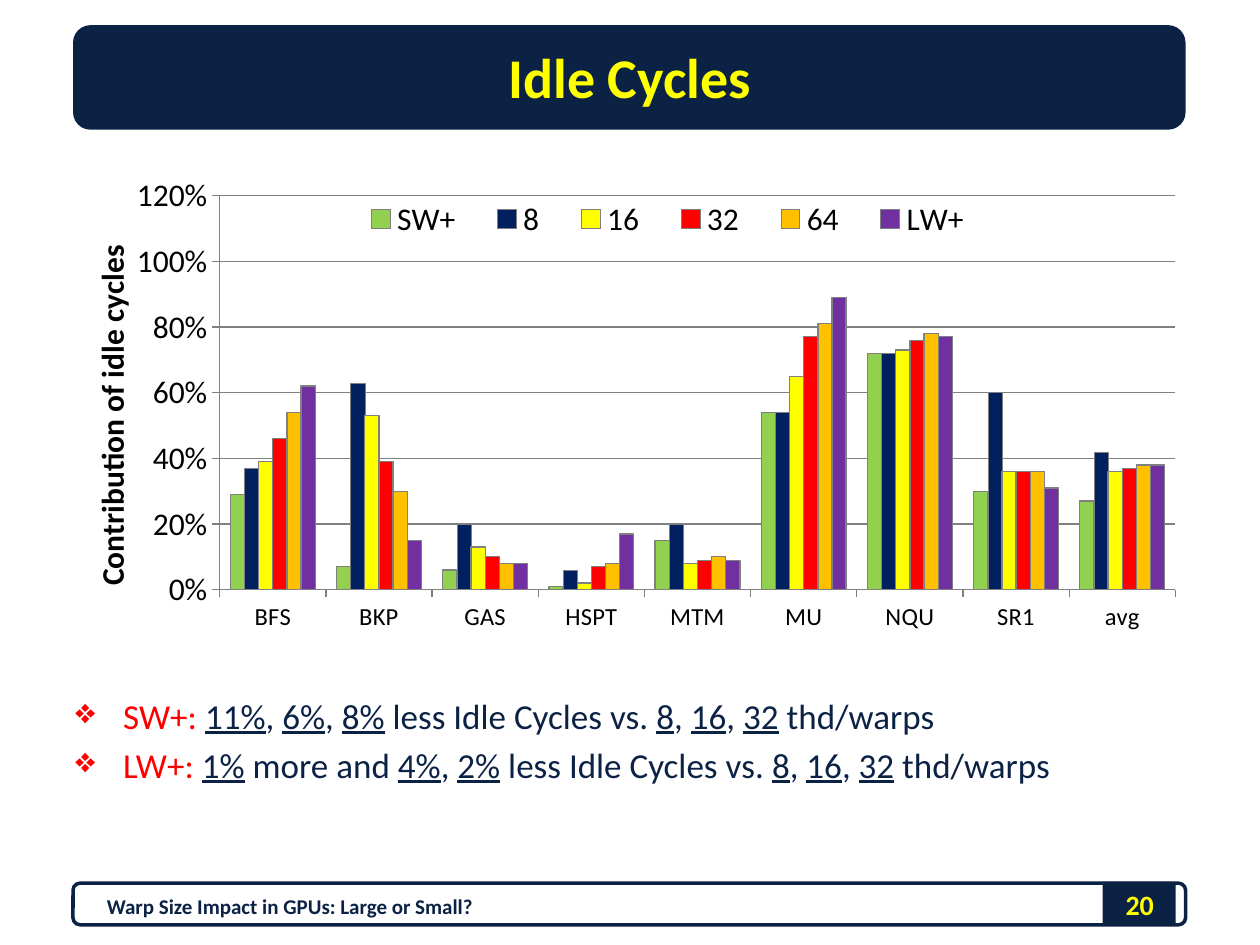
from lxml import etree
from pptx import Presentation
from pptx.chart.data import CategoryChartData as ChartData
from pptx.dml.color import RGBColor
from pptx.enum.chart import XL_CHART_TYPE as ChartType
from pptx.enum.chart import XL_LEGEND_POSITION as LegendSide
from pptx.enum.chart import XL_TICK_MARK as Tick
from pptx.enum.shapes import MSO_SHAPE as Shape
from pptx.enum.text import MSO_ANCHOR as Anchor
from pptx.enum.text import PP_ALIGN as Align
from pptx.oxml.ns import qn
from pptx.util import Inches, Pt

NAVY = RGBColor(0x0B, 0x22, 0x45)
YELLOW = RGBColor(0xFF, 0xFF, 0x00)
RED = RGBColor(0xFF, 0x00, 0x00)
BLACK = RGBColor(0x00, 0x00, 0x00)
GRAY = RGBColor(0x80, 0x80, 0x80)
GREEN = RGBColor(0x92, 0xD0, 0x50)
BLUE = RGBColor(0x00, 0x20, 0x60)
ORANGE = RGBColor(0xFF, 0xC0, 0x00)
PURPLE = RGBColor(0x70, 0x30, 0xA0)

BENCHMARKS = ["BFS", "BKP", "GAS", "HSPT", "MTM", "MU", "NQU", "SR1", "avg"]
# Name, colour, outline width, share of idle cycles per benchmark
WARP_SIZES = [
    ("SW+", GREEN, 0.75, [0.29, 0.07, 0.06, 0.01, 0.15, 0.54, 0.72, 0.30, 0.27]),
    ("8", BLUE, 0.25, [0.37, 0.63, 0.20, 0.06, 0.20, 0.54, 0.72, 0.60, 0.42]),
    ("16", YELLOW, 0.75, [0.39, 0.53, 0.13, 0.02, 0.08, 0.65, 0.73, 0.36, 0.36]),
    ("32", RED, 0.75, [0.46, 0.39, 0.10, 0.07, 0.09, 0.77, 0.76, 0.36, 0.37]),
    ("64", ORANGE, 0.75, [0.54, 0.30, 0.08, 0.08, 0.10, 0.81, 0.78, 0.36, 0.38]),
    ("LW+", PURPLE, 0.75, [0.62, 0.15, 0.08, 0.17, 0.09, 0.89, 0.77, 0.31, 0.38]),
]
# Lead word and text; underscores enclose underlined figures
FINDINGS = [
    ("SW+: ", "_11%_, _6%_, _8%_ less Idle Cycles vs. _8_, _16_, _32_ thd/warps"),
    ("LW+: ", "_1%_ more and _4%_, _2%_ less Idle Cycles vs. _8_, _16_, _32_ thd/warps"),
]


def apply(target, values):
    for name, value in values.items():
        setattr(target, name, value)


def set_layout(parent, index, **sizes):
    """Place a chart part by fractions of the chart area."""
    for old in parent.findall(qn("c:layout")):
        parent.remove(old)
    layout = etree.Element(qn("c:layout"))
    manual = etree.SubElement(layout, qn("c:manualLayout"))
    if parent.tag == qn("c:plotArea"):
        etree.SubElement(manual, qn("c:layoutTarget")).set("val", "inner")
    for side in "xy":
        etree.SubElement(manual, qn(f"c:{side}Mode")).set("val", "edge")
    for side, size in sizes.items():
        etree.SubElement(manual, qn(f"c:{side}")).set("val", str(size))
    parent.insert(index, layout)


class SlideBuilder:
    font_name = "Calibri"

    def __init__(self, page):
        self.page = page

    def style(self, font, color, **values):
        apply(font, {"name": self.font_name, **values})
        font.color.rgb = color

    def panel(self, kind, place, fill=None, line=None):
        panel = self.page.shapes.add_shape(kind, *map(Inches, place))
        panel.shadow.inherit = False
        if fill is None:
            panel.fill.background()
        else:
            panel.fill.solid()
            panel.fill.fore_color.rgb = fill
        if line is None:
            panel.line.fill.background()
        else:
            panel.line.color.rgb = line
            panel.line.width = Pt(2)

    def text_frame(self, place, anchor):
        box = self.page.shapes.add_textbox(*map(Inches, place))
        apply(box.text_frame, {"word_wrap": True, "vertical_anchor": anchor})
        return box.text_frame

    def label(self, place, text, size, color, align):
        para = self.text_frame(place, Anchor.MIDDLE).paragraphs[0]
        para.alignment = align
        span = para.add_run()
        span.text = text
        self.style(span.font, color, size=Pt(size), bold=True)

    def bullets(self, place, items):
        frame = self.text_frame(place, Anchor.TOP)
        for number, (lead, text) in enumerate(items):
            para = frame.add_paragraph() if number else frame.paragraphs[0]
            props = para._p.get_or_add_pPr()
            props.set("marL", str(Inches(0.38)))
            props.set("indent", str(Inches(-0.38)))
            if number:
                para.space_before = Pt(4)
            etree.SubElement(props, qn("a:buChar")).set("char", "❖")
            spans = [(lead, RED, False)]
            spans += [(part, NAVY, place % 2 == 1)
                      for place, part in enumerate(text.split("_")) if part]
            for words, color, underline in spans:
                span = para.add_run()
                span.text = words
                self.style(span.font, color, size=Pt(20), underline=underline)

    def column_chart(self, place, categories, rows, axis_title):
        data = ChartData(number_format="0%")
        data.categories = categories
        for name, _, _, values in rows:
            data.add_series(name, values)
        frame = self.page.shapes.add_chart(
            ChartType.COLUMN_CLUSTERED, *map(Inches, place), data)
        chart = frame.chart
        chart.has_title = False
        self.style(chart.font, BLACK, size=Pt(14))

        # Columns
        plot = chart.plots[0]
        apply(plot, {"gap_width": 150, "overlap": 0, "vary_by_categories": False})
        for series, (_, color, width, _) in zip(plot.series, rows):
            series.format.fill.solid()
            series.format.fill.fore_color.rgb = color
            series.format.line.color.rgb = GRAY
            series.format.line.width = Pt(width)
        set_layout(chart._chartSpace.chart.plotArea, 0,
                   x=0.132, y=0.057, w=0.86, h=0.798)

        # Axes
        value_axis = chart.value_axis
        apply(value_axis, {"minimum_scale": 0, "maximum_scale": 1.2,
                           "major_unit": 0.2, "has_major_gridlines": True})
        apply(value_axis.tick_labels,
              {"number_format": "0%", "number_format_is_linked": False})
        self.style(value_axis.tick_labels.font, BLACK, size=Pt(18))
        for axis in (value_axis, chart.category_axis):
            axis.major_tick_mark = Tick.OUTSIDE
            axis.format.line.color.rgb = GRAY
        grid_line = value_axis.major_gridlines.format.line
        grid_line.color.rgb = GRAY
        grid_line.width = Pt(0.75)
        title = value_axis.axis_title
        title.text_frame.text = axis_title
        span = title.text_frame.paragraphs[0].runs[0]
        self.style(span.font, BLACK, size=Pt(18), bold=True)
        set_layout(title._element, 1, x=0.01, y=0.146)

        # Legend
        chart.has_legend = True
        apply(chart.legend, {"position": LegendSide.TOP, "include_in_layout": True})
        self.style(chart.legend.font, BLACK, size=Pt(18))
        set_layout(chart.legend._element, 1, x=0.24, y=0.065, w=0.59, h=0.08)


def main():
    deck = Presentation()
    apply(deck, {"slide_width": Inches(10), "slide_height": Inches(7.5)})
    builder = SlideBuilder(deck.slides.add_slide(deck.slide_layouts[6]))

    # Footer and title panels
    builder.panel(Shape.RECTANGLE, (8.75, 7, 0.58, 0.33), fill=NAVY)
    builder.panel(Shape.ROUNDED_RECTANGLE, (0.58, 7.01, 8.83, 0.33), line=NAVY)
    builder.panel(Shape.ROUNDED_RECTANGLE, (0.58, 0.2, 8.83, 0.83), fill=NAVY)

    # Title
    builder.label((0.5, 0.17, 9, 0.87), "Idle Cycles", 32, YELLOW, Align.CENTER)

    # Findings
    builder.bullets((0.5, 5.46, 9, 1.24), FINDINGS)

    # Footer text
    builder.label((8.67, 6.98, 0.75, 0.4), "20", 16, YELLOW, Align.CENTER)
    builder.label((0.75, 6.99, 5.58, 0.4),
                  "Warp Size Impact in GPUs: Large or Small?", 12, NAVY, Align.LEFT)

    # Chart
    builder.column_chart((0.58, 1.33, 8.82, 3.92), BENCHMARKS, WARP_SIZES,
                         "Contribution of idle cycles")
    deck.save("out.pptx")


if __name__ == "__main__":
    main()
